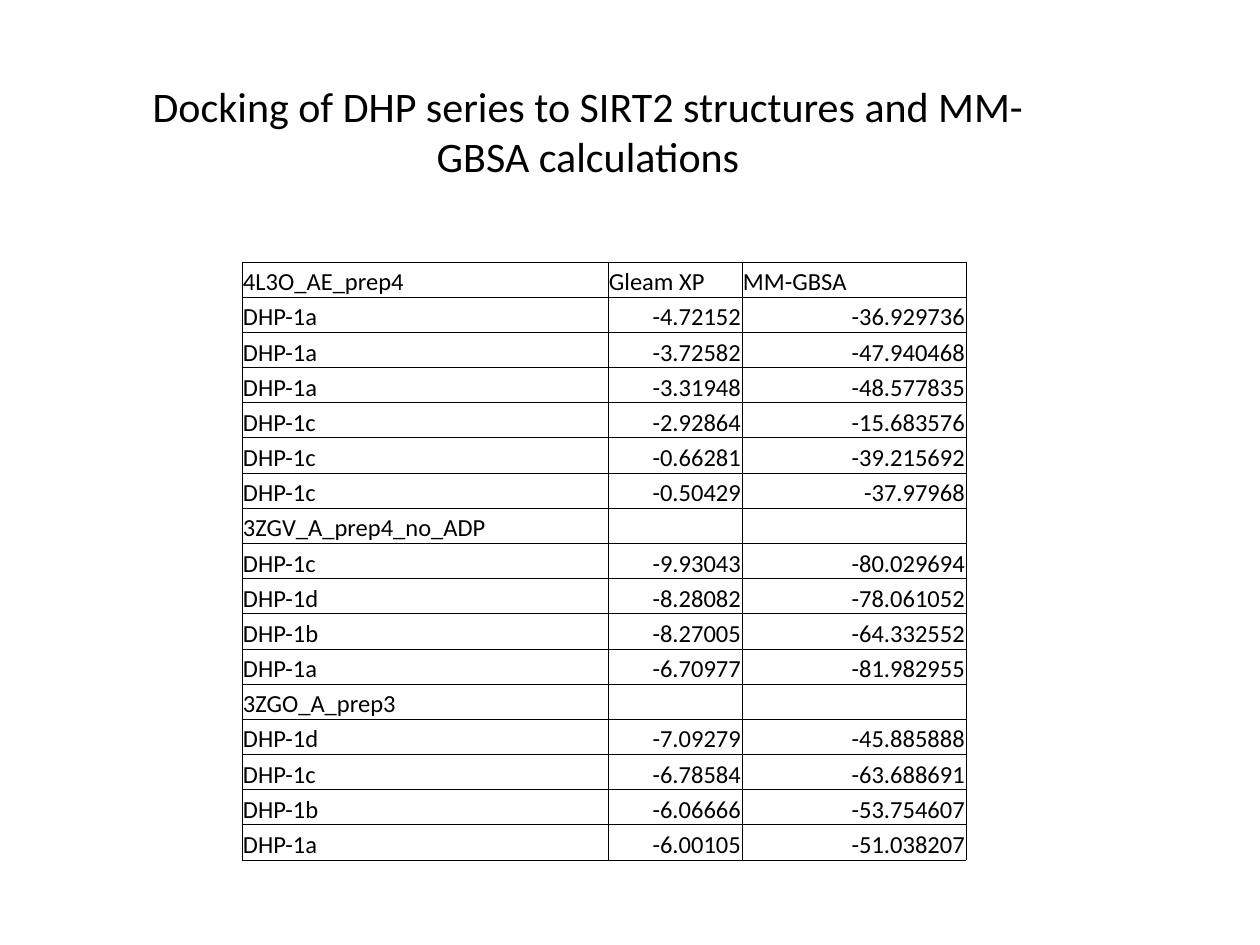
from lxml.etree import SubElement
from pptx import Presentation
from pptx.dml.color import RGBColor
from pptx.enum.text import MSO_ANCHOR, MSO_AUTO_SIZE, PP_ALIGN
from pptx.oxml.ns import qn
from pptx.util import Emu, Pt

EMU_PER_PX = 914400 / 126
FONT = "Calibri"
BLACK = RGBColor(0x00, 0x00, 0x00)
TITLE = "Docking of DHP series to SIRT2 structures and MM-GBSA calculations"

# Ligand or structure, docking score, binding energy
DOCKING_ROWS = [
    ("4L3O_AE_prep4", "Gleam XP", "MM-GBSA"),
    ("DHP-1a", "-4.72152", "-36.929736"),
    ("DHP-1a", "-3.72582", "-47.940468"),
    ("DHP-1a", "-3.31948", "-48.577835"),
    ("DHP-1c", "-2.92864", "-15.683576"),
    ("DHP-1c", "-0.66281", "-39.215692"),
    ("DHP-1c", "-0.50429", "-37.97968"),
    ("3ZGV_A_prep4_no_ADP", "", ""),
    ("DHP-1c", "-9.93043", "-80.029694"),
    ("DHP-1d", "-8.28082", "-78.061052"),
    ("DHP-1b", "-8.27005", "-64.332552"),
    ("DHP-1a", "-6.70977", "-81.982955"),
    ("3ZGO_A_prep3", "", ""),
    ("DHP-1d", "-7.09279", "-45.885888"),
    ("DHP-1c", "-6.78584", "-63.688691"),
    ("DHP-1b", "-6.06666", "-53.754607"),
    ("DHP-1a", "-6.00105", "-51.038207"),
]
COLUMN_WIDTHS = (366, 134, 224)
TABLE_HEIGHT = 598


def px(length):
    return Emu(round(length * EMU_PER_PX))


def format_paragraph(paragraph, size, align):
    paragraph.alignment = align
    for run in paragraph.runs:
        run.font.name = FONT
        run.font.size = Pt(size)
        run.font.color.rgb = BLACK


def place_title(slide):
    title = slide.shapes.title
    title.left, title.top, title.width, title.height = px(95), px(73), px(986), px(115)
    frame = title.text_frame
    frame.text = TITLE
    frame.word_wrap = True
    frame.auto_size = MSO_AUTO_SIZE.SHAPE_TO_FIT_TEXT
    frame.vertical_anchor = MSO_ANCHOR.MIDDLE
    format_paragraph(frame.paragraphs[0], 24, PP_ALIGN.CENTER)


def add_borders(cell):
    properties = cell._tc.get_or_add_tcPr()
    for side in ("a:lnL", "a:lnR", "a:lnT", "a:lnB"):
        line = SubElement(properties, qn(side), w=str(Pt(0.5)))
        fill = SubElement(line, qn("a:solidFill"))
        SubElement(fill, qn("a:srgbClr"), val=str(BLACK))


def fill_cell(cell, text):
    add_borders(cell)
    cell.fill.background()
    cell.margin_left = cell.margin_right = cell.margin_top = px(1)
    cell.margin_bottom = 0
    cell.vertical_anchor = MSO_ANCHOR.BOTTOM
    cell.text = text
    paragraph = cell.text_frame.paragraphs[0]
    is_number = text.startswith("-")
    format_paragraph(paragraph, 14, PP_ALIGN.RIGHT if is_number else PP_ALIGN.LEFT)
    if not text:
        # Keeps an empty cell from stretching its row
        SubElement(paragraph._p, qn("a:endParaRPr"), sz="1400")


def add_docking_table(slide):
    table = slide.shapes.add_table(
        len(DOCKING_ROWS), len(COLUMN_WIDTHS),
        px(242), px(262), px(sum(COLUMN_WIDTHS)), px(TABLE_HEIGHT),
    ).table
    table.first_row = table.horz_banding = False
    for column, width in zip(table.columns, COLUMN_WIDTHS):
        column.width = px(width)
    for row, values in zip(table.rows, DOCKING_ROWS):
        row.height = px(TABLE_HEIGHT / len(DOCKING_ROWS))
        for cell, value in zip(row.cells, values):
            fill_cell(cell, value)


def main():
    deck = Presentation()
    deck.slide_width, deck.slide_height = px(1260), px(945)
    slide = deck.slides.add_slide(deck.slide_layouts[5])
    add_docking_table(slide)
    place_title(slide)
    deck.save("out.pptx")


if __name__ == "__main__":
    main()
